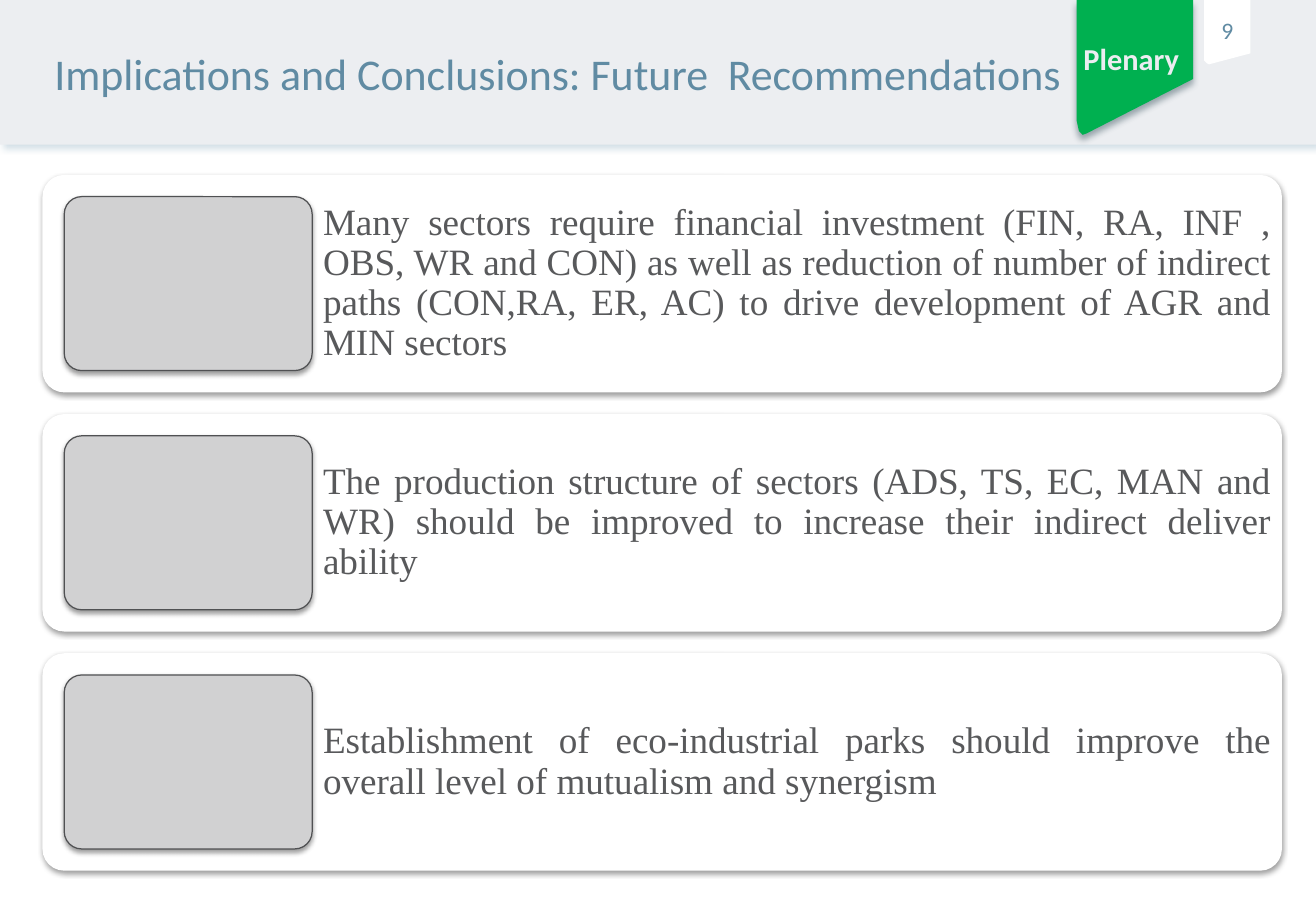
"""Build the recommendations slide: a header with a section ribbon above three cards."""
from dataclasses import dataclass

from lxml.etree import SubElement
from pptx import Presentation
from pptx.dml.color import RGBColor
from pptx.enum.shapes import MSO_SHAPE as Preset
from pptx.enum.text import MSO_ANCHOR as Anchor, MSO_AUTO_SIZE as AutoSize, PP_ALIGN as Align
from pptx.oxml.ns import qn
from pptx.util import Inches, Pt

TITLE = "Implications and Conclusions: Future  Recommendations"
SECTION = "Plenary"
PAGE = "9"
RECOMMENDATIONS = [
    "Many sectors require financial investment (FIN, RA, INF , OBS, WR and CON) as well as "
    "reduction of number of indirect paths (CON,RA, ER, AC) to drive development of AGR and "
    "MIN sectors ",
    "The production structure of sectors (ADS, TS, EC, MAN and WR) should be improved to "
    "increase their indirect deliver ability ",
    "Establishment of eco-industrial parks should improve the overall level of mutualism "
    "and synergism",
]


@dataclass(frozen=True)
class Theme:
    heading: str = "Calibri"
    body: str = "Times New Roman"
    accent: str = "608BA3"
    band: str = "ECEEF1"
    ribbon: str = "00B050"
    ribbon_text: str = "ECEDF1"
    card: str = "FFFFFF"
    panel: str = "D1D1D2"
    panel_line: str = "505153"
    body_text: str = "58595B"
    title_size: int = 26
    body_size: int = 22
    section_size: int = 18
    page_size: int = 14
    band_shadow: tuple = ("8FAEC1", 40, 4, 3, 45)
    ribbon_shadow: tuple = ("183642", 40, 4, 3, 90)
    card_shadow: tuple = ("000000", 38, 3.1, 1.6, 90)


theme = Theme()
SLIDE_W, SLIDE_H = 10.83, 7.5
HEADER_H = 1.19
CARD_LEFT, CARD_TOP, CARD_W, CARD_H = 0.35, 1.44, 10.2, 1.79
CARD_PITCH = CARD_H * 1.1
PAD = CARD_H / 10
PANEL_W = CARD_W / 5
RIBBON = [(8.86, 0), (9.82, 0), (9.82, 0.65), (8.94, 1.1), (8.91, 1.11), (8.88, 1.08), (8.86, 0.99)]
PAGE_FLAG = [(9.91, 0), (10.29, 0), (10.29, 0.44), (9.95, 0.53), (9.93, 0.52), (9.91, 0.5)]


def paint(shape, fill, line=None, shadow=None):
    shape.fill.solid()
    shape.fill.fore_color.rgb = RGBColor.from_string(fill)
    if line:
        shape.line.color.rgb = RGBColor.from_string(line)
        shape.line.width = Pt(0.75)
    else:
        shape.line.fill.background()
    shape.shadow.inherit = False
    if shadow:
        color, opacity, blur, distance, angle = shadow
        effects = shape._element.spPr.find(qn("a:effectLst"))
        outer = SubElement(effects, qn("a:outerShdw"), blurRad=str(Pt(blur)), dist=str(Pt(distance)),
                           dir=str(angle * 60000), algn="ctr", rotWithShape="0")
        tint = SubElement(outer, qn("a:srgbClr"), val=color)
        SubElement(tint, qn("a:alpha"), val=str(opacity * 1000))


def add_preset(slide, preset, box, fill, **style):
    shape = slide.shapes.add_shape(preset, *map(Inches, box))
    if preset == Preset.ROUNDED_RECTANGLE:
        shape.adjustments[0] = 0.1
    paint(shape, fill, **style)
    return shape


def add_outline(slide, points, fill, **style):
    start, *rest = [(Inches(x), Inches(y)) for x, y in points]
    builder = slide.shapes.build_freeform(*start)
    builder.add_line_segments(rest)
    shape = builder.convert_to_shape()
    paint(shape, fill, **style)
    return shape


def write(shape, text, font, size, color, align=Align.CENTER, anchor=Anchor.TOP,
          insets=(0, 0, 0, 0), wrap=True, bold=False):
    frame = shape.text_frame
    frame.text = text
    frame.auto_size = AutoSize.NONE
    frame.word_wrap = wrap
    frame.vertical_anchor = anchor
    (frame.margin_left, frame.margin_top,
     frame.margin_right, frame.margin_bottom) = map(Inches, insets)
    paragraph = frame.paragraphs[0]
    paragraph.alignment = align
    paragraph.font.name = font
    paragraph.font.size = Pt(size)
    paragraph.font.bold = bold
    paragraph.font.color.rgb = RGBColor.from_string(color)
    return paragraph


def add_header(slide):
    add_preset(slide, Preset.RECTANGLE, (0, 0, SLIDE_W, HEADER_H), theme.band,
               shadow=theme.band_shadow)
    page_flag = add_outline(slide, PAGE_FLAG, theme.card)
    write(page_flag, PAGE, theme.heading, theme.page_size, theme.accent,
          anchor=Anchor.MIDDLE, insets=(0, 0, 0, 0.04), wrap=False)
    add_outline(slide, RIBBON, theme.ribbon, shadow=theme.ribbon_shadow)
    section = add_preset(slide, Preset.RECTANGLE, (8.88, 0.33, 0.86, 0.3), theme.ribbon)
    write(section, SECTION, theme.heading, theme.section_size, theme.ribbon_text, bold=True)

    title = slide.shapes.title
    title.left, title.top, title.width, title.height = map(Inches, (0.09, 0.33, 9.01, 0.41))
    write(title, TITLE, theme.heading, theme.title_size, theme.accent,
          insets=(0.1, 0.05, 0.1, 0.05))
    slide.shapes._spTree.append(title._element)


def add_card(slide, row, recommendation):
    top = CARD_TOP + row * CARD_PITCH
    text_left = CARD_LEFT + PAD + PANEL_W
    add_preset(slide, Preset.ROUNDED_RECTANGLE, (CARD_LEFT, top, CARD_W, CARD_H), theme.card,
               shadow=theme.card_shadow)
    message = slide.shapes.add_textbox(
        *map(Inches, (text_left, top, CARD_LEFT + CARD_W - text_left, CARD_H)))
    paragraph = write(message, recommendation, theme.body, theme.body_size, theme.body_text,
                      align=Align.JUSTIFY, anchor=Anchor.MIDDLE, insets=(0.09,) * 4)
    paragraph.line_spacing = 0.9
    add_preset(slide, Preset.ROUNDED_RECTANGLE,
               (CARD_LEFT + PAD, top + PAD, PANEL_W, CARD_H - 2 * PAD), theme.panel,
               line=theme.panel_line, shadow=theme.card_shadow)


def main():
    deck = Presentation()
    deck.slide_width, deck.slide_height = Inches(SLIDE_W), Inches(SLIDE_H)
    slide = deck.slides.add_slide(deck.slide_layouts[5])
    add_header(slide)
    for row, recommendation in enumerate(RECOMMENDATIONS):
        add_card(slide, row, recommendation)
    deck.save("out.pptx")


if __name__ == "__main__":
    main()
